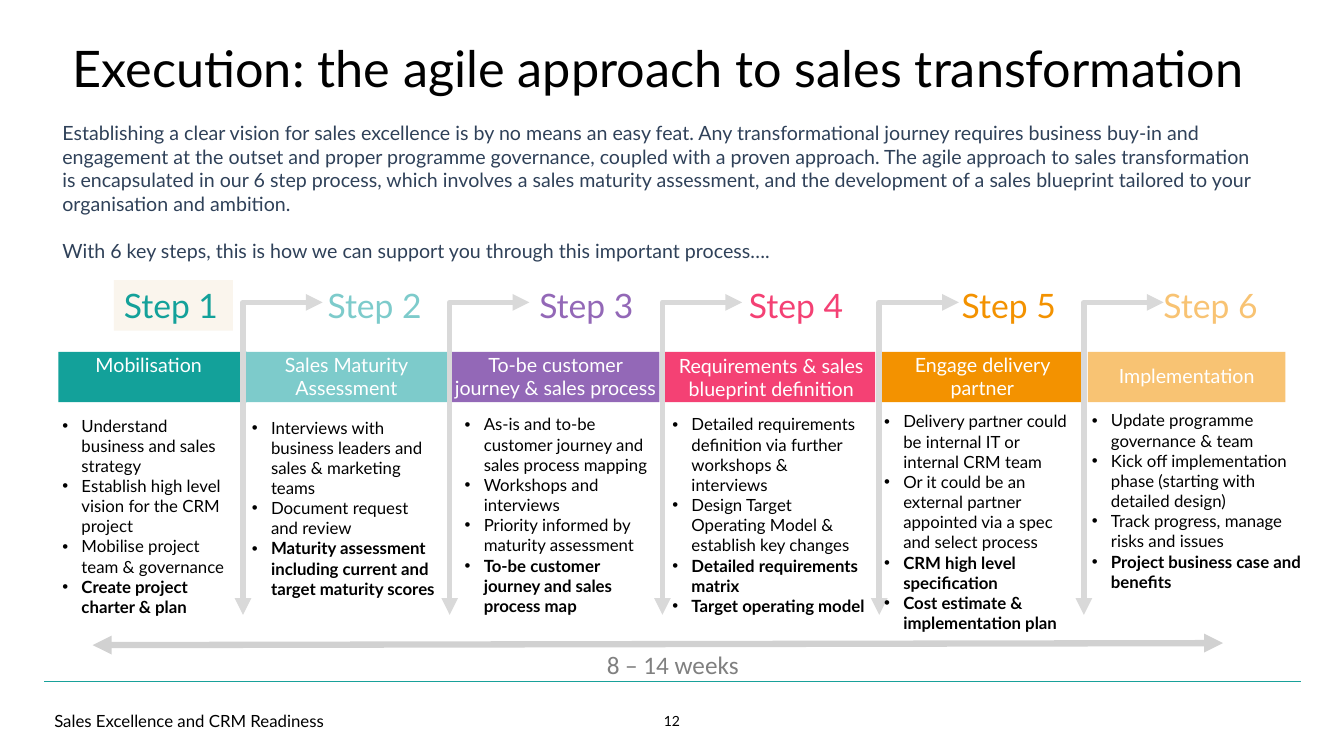
from dataclasses import dataclass
from typing import Optional

from lxml.etree import SubElement
from pptx import Presentation
from pptx.dml.color import RGBColor
from pptx.enum.shapes import MSO_CONNECTOR, MSO_SHAPE
from pptx.enum.text import MSO_ANCHOR, PP_ALIGN
from pptx.oxml.ns import qn
from pptx.util import Inches, Pt


@dataclass(frozen=True)
class Theme:
    font: str = "Lato"
    duration_font: str = "Calibri"
    black: str = "000000"
    white: str = "FFFFFF"
    intro: str = "2F4159"
    duration: str = "808080"
    first_step: str = "FAF5ED"
    rule: str = "18A19A"
    flow: str = "D9D9D9"
    span: str = "D1D1D1"
    title_pt: float = 36
    step_pt: float = 24
    duration_pt: float = 18
    body_pt: float = 14
    bullet_pt: float = 12
    number_pt: float = 10
    para_gap: float = 16.8


@dataclass(frozen=True)
class Box:
    left: float
    top: float
    width: float
    height: float


@dataclass(frozen=True)
class Step:
    color: str
    label_left: float
    bar_left: float
    bar_width: float
    heading: str
    heading_box: Box
    bullets_box: Box
    bullets: list[str]
    bold_count: int = 1
    arrow_x: Optional[float] = None
    heading_inset: float = 0.1


T = Theme()
BAR_TOP, BAR_HEIGHT = 3.49, 0.5
LABEL_TOP, LABEL_WIDTH = 2.78, 1.18
ARROW_TOP, ARROW_BOTTOM, ARROW_REACH = 3.0, 6.1, 0.79
BULLET_INDENT = 0.19

STEPS = [
    Step("13A19A", 1.13, 0.58, 1.87, "Mobilisation",
         Box(0.54, 3.45, 1.87, 0.34), Box(0.52, 4.07, 1.87, 2.12),
         ["Understand business and sales strategy",
          "Establish high level vision for the CRM project",
          "Mobilise project team & governance",
          "Create project charter & plan"]),
    Step("7DCBCB", 3.15, 2.41, 2.06, "Sales Maturity Assessment",
         Box(2.39, 3.45, 2.09, 0.57), Box(2.4, 4.09, 2.06, 1.92),
         ["Interviews with business leaders and sales & marketing teams",
          "Document request and review",
          "Maturity assessment including current and target maturity scores"],
         arrow_x=2.41),
    Step("9368B7", 5.25, 4.48, 2.06, "To-be customer journey & sales process",
         Box(4.48, 3.45, 2.06, 0.57), Box(4.51, 4.06, 2.04, 2.32),
         ["As-is and to-be customer journey and sales process mapping",
          "Workshops and interviews",
          "Priority informed by maturity assessment",
          "To-be customer journey and sales process map"],
         arrow_x=4.46, heading_inset=0.02),
    Step("F44174", 7.33, 6.56, 2.12, "Requirements & sales blueprint definition",
         Box(6.61, 3.46, 2.08, 0.57), Box(6.57, 4.06, 2.14, 2.36),
         ["Detailed requirements definition via further workshops & interviews",
          "Design Target Operating Model & establish key changes",
          "Detailed requirements matrix",
          "Target operating model"],
         bold_count=2, arrow_x=6.57),
    Step("F39200", 9.44, 8.69, 2.04, "Engage delivery partner",
         Box(8.76, 3.45, 1.97, 0.57), Box(8.67, 4.03, 2.12, 2.56),
         ["Delivery partner could be internal IT or internal CRM team",
          "Or it could be an external partner appointed via a spec and select process",
          "CRM high level specification",
          "Cost estimate & implementation plan"],
         bold_count=2, arrow_x=8.72),
    Step("F8C373", 11.44, 10.79, 1.96, "Implementation",
         Box(10.79, 3.56, 1.96, 0.34), Box(10.73, 4.02, 2.31, 2.12),
         ["Update programme governance & team",
          "Kick off implementation phase (starting with detailed design)",
          "Track progress, manage risks and issues",
          "Project business case and benefits"],
         arrow_x=10.75),
]


def add_text(s, box: Box, lines: list[str], size: float, color: str,
             font: str = T.font, align=PP_ALIGN.LEFT, anchor=MSO_ANCHOR.TOP,
             inset: float = 0.1):
    sp = s.shapes.add_textbox(Inches(box.left), Inches(box.top),
                              Inches(box.width), Inches(box.height))
    tf = sp.text_frame
    tf.word_wrap = True
    tf.vertical_anchor = anchor
    tf.margin_left = tf.margin_right = Inches(inset)
    for i, line in enumerate(lines):
        p = tf.paragraphs[0] if i == 0 else tf.add_paragraph()
        p.text = line
        p.alignment = align
        for r in p.runs:
            r.font.name = font
            r.font.size = Pt(size)
            r.font.color.rgb = RGBColor.from_string(color)
    return sp


def add_bullets(s, step: Step) -> None:
    sp = add_text(s, step.bullets_box, step.bullets, T.bullet_pt, T.black)
    first_bold = len(step.bullets) - step.bold_count
    for i, p in enumerate(sp.text_frame.paragraphs):
        pPr = p._p.get_or_add_pPr()
        pPr.set("marL", str(Inches(BULLET_INDENT)))
        pPr.set("indent", str(-Inches(BULLET_INDENT)))
        SubElement(pPr, qn("a:buFont")).set("typeface", "Arial")
        SubElement(pPr, qn("a:buChar")).set("char", "•")
        if i >= first_bold:
            p.runs[0].font.bold = True


def style_line(sp, color: str, width: float, arrows: bool = True) -> None:
    sp.line.color.rgb = RGBColor.from_string(color)
    sp.line.width = Pt(width)
    if arrows:
        ln = sp.line._get_or_add_ln()
        for end in ("a:headEnd", "a:tailEnd"):
            SubElement(ln, qn(end)).set("type", "triangle")


def add_line(s, x1: float, y1: float, x2: float, y2: float,
             color: str, width: float, arrows: bool) -> None:
    sp = s.shapes.add_connector(MSO_CONNECTOR.STRAIGHT, Inches(x1), Inches(y1),
                                Inches(x2), Inches(y2))
    style_line(sp, color, width, arrows)
    SubElement(sp._element.spPr, qn("a:effectLst"))


def add_bar(s, step: Step) -> None:
    sp = s.shapes.add_shape(MSO_SHAPE.RECTANGLE, Inches(step.bar_left), Inches(BAR_TOP),
                            Inches(step.bar_width), Inches(BAR_HEIGHT))
    sp.shadow.inherit = False
    sp.fill.solid()
    sp.fill.fore_color.rgb = RGBColor.from_string(step.color)
    sp.line.fill.background()


def add_flow_arrow(s, x: float) -> None:
    fb = s.shapes.build_freeform(Inches(x), Inches(ARROW_BOTTOM))
    fb.add_line_segments([(Inches(x), Inches(ARROW_TOP)),
                          (Inches(x + ARROW_REACH), Inches(ARROW_TOP))], close=False)
    sp = fb.convert_to_shape()
    sp.shadow.inherit = False
    sp.fill.background()
    style_line(sp, T.flow, 4)


def main() -> None:
    prs = Presentation()
    prs.slide_width, prs.slide_height = Inches(13.33), Inches(7.5)
    s = prs.slides.add_slide(prs.slide_layouts[6])

    # Title and introduction
    title = add_text(s, Box(0.62, 0.43, 12.04, 0.55),
                     ["Execution: the agile approach to sales transformation"],
                     T.title_pt, T.black, anchor=MSO_ANCHOR.MIDDLE)
    title.text_frame.paragraphs[0].line_spacing = 0.9
    intro = add_text(s, Box(0.52, 1.15, 12.1, 1.51), [
        "Establishing a clear vision for sales excellence is by no means an easy feat. "
        "Any transformational journey requires business buy-in and engagement at the "
        "outset and proper programme governance, coupled with a proven approach. The "
        "agile approach to sales transformation is encapsulated in our 6 step process, "
        "which involves a sales maturity assessment, and the development of a sales "
        "blueprint tailored to your organisation and ambition.",
        "With 6 key steps, this is how we can support you through this important process….",
    ], T.body_pt, T.intro)
    intro.text_frame.paragraphs[1].space_before = Pt(T.para_gap)

    # Coloured bars, then the arrows that run over them
    for step in STEPS:
        add_bar(s, step)
    for step in STEPS:
        if step.arrow_x is not None:
            add_flow_arrow(s, step.arrow_x)

    # Step labels, headings and bullets
    for number, step in enumerate(STEPS, 1):
        label = add_text(s, Box(step.label_left, LABEL_TOP, LABEL_WIDTH, 0.5),
                         [f"Step {number}"], T.step_pt, step.color)
        if number == 1:
            label.fill.solid()
            label.fill.fore_color.rgb = RGBColor.from_string(T.first_step)
        add_text(s, step.heading_box, [step.heading], T.body_pt, T.white,
                 align=PP_ALIGN.CENTER, inset=step.heading_inset)
        add_bullets(s, step)

    # Duration
    add_line(s, 0.92, 6.4, 12.13, 6.38, T.span, 4.5, arrows=True)
    add_text(s, Box(5.92, 6.39, 1.8, 0.4), ["8 – 14 weeks"],
             T.duration_pt, T.duration, font=T.duration_font)

    # Footer
    add_line(s, 0.44, 6.76, 12.9, 6.76, T.rule, 1, arrows=False)
    add_text(s, Box(0.44, 6.95, 4.5, 0.4), ["Sales Excellence and CRM Readiness"],
             T.bullet_pt, T.black, anchor=MSO_ANCHOR.MIDDLE)
    add_text(s, Box(5.87, 6.95, 1.59, 0.4), ["12"], T.number_pt, T.black,
             align=PP_ALIGN.CENTER, anchor=MSO_ANCHOR.MIDDLE)

    prs.save("out.pptx")


if __name__ == "__main__":
    main()
